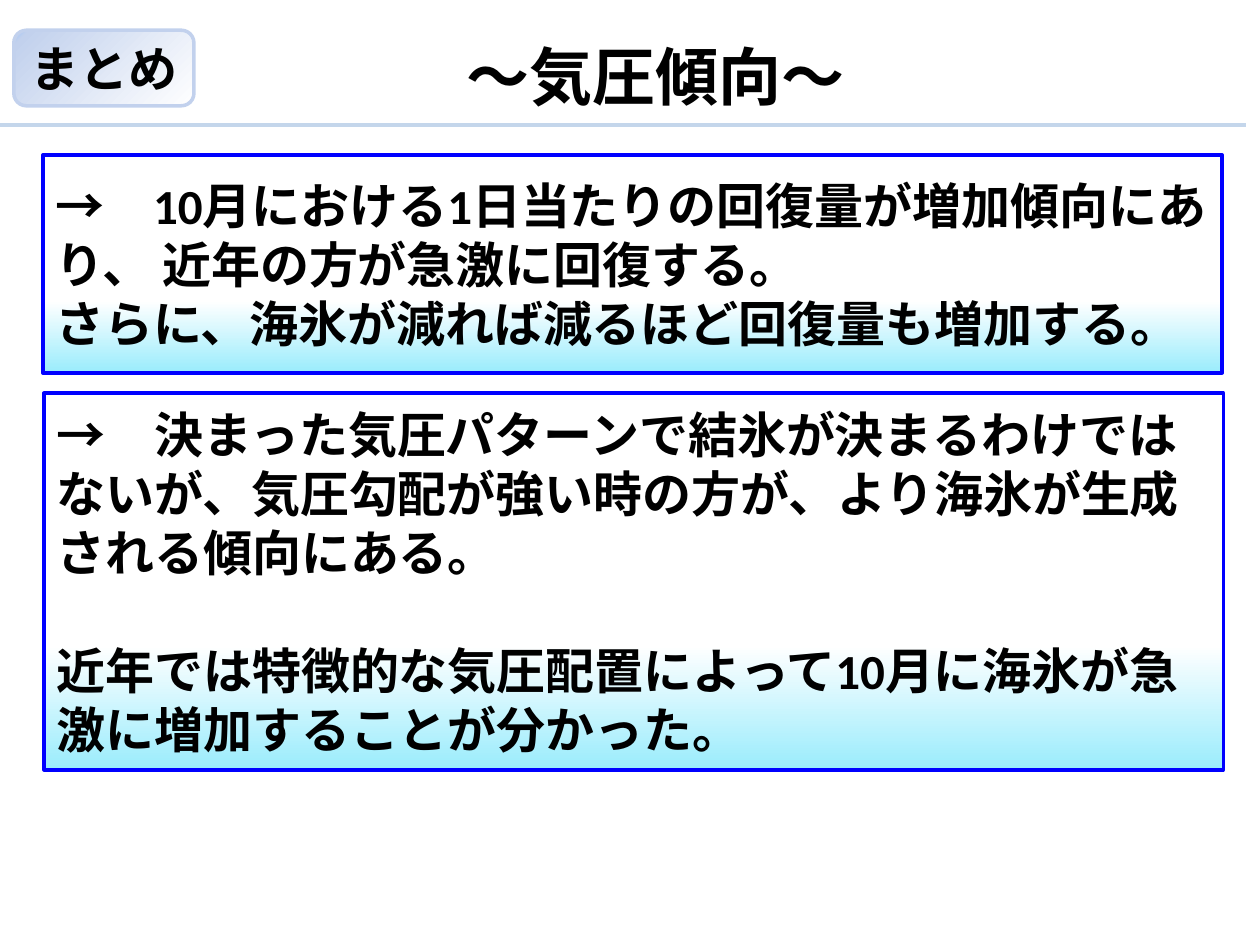
"""Build the summary slide on pressure trends and sea ice."""
from copy import deepcopy

from pptx import Presentation
from pptx.dml.color import RGBColor
from pptx.enum.lang import MSO_LANGUAGE_ID as LANG
from pptx.enum.shapes import MSO_CONNECTOR, MSO_SHAPE
from pptx.enum.text import MSO_ANCHOR, PP_ALIGN
from pptx.oxml.ns import qn
from pptx.util import Inches, Pt
from lxml.etree import SubElement

COLORS = {
    "text": "000000", "white": "FFFFFF", "border": "0000FF", "aqua": "9AECFC",
    "rule": "C4D6EB", "sky": "9BC3FF", "pale": "C2D1ED",
}
BOX_STOPS = [(0, "aqua"), (0.33, "white")]
BADGE_STOPS = [(0, "sky"), (0.06, "pale"), (1, "white")]


def write(s, paragraphs, size=28, align=PP_ALIGN.LEFT, gap=0):
    tf = s.text_frame
    tf.word_wrap = True
    tf.vertical_anchor = MSO_ANCHOR.MIDDLE
    for i, text in enumerate(paragraphs):
        p = tf.add_paragraph() if i else tf.paragraphs[0]
        p.alignment = align
        p.space_before = Pt(gap if i else 0)
        r = p.add_run()
        r.text = text
        r.font.name = "Calibri"
        r.font.size = Pt(size)
        r.font.bold = True
        r.font.language_id = LANG.JAPANESE
        r.font.color.rgb = RGBColor.from_string(COLORS["text"])


def add_panel(shapes, kind, box, stops, angle, line):
    s = shapes.add_shape(kind, *(Inches(v) for v in box))
    s.shadow.inherit = False
    s.fill.gradient()
    s.fill.gradient_angle = angle
    gs_list = next(s.element.spPr.iter(qn("a:gsLst")))
    while len(gs_list) < len(stops):
        gs_list.append(deepcopy(gs_list[-1]))
    for stop, (position, color) in zip(s.fill.gradient_stops, stops):
        stop.position = position
        stop.color.rgb = RGBColor.from_string(COLORS[color])
    s.line.color.rgb = RGBColor.from_string(COLORS[line])
    s.line.width = Pt(2)
    return s


prs = Presentation()
prs.slide_width, prs.slide_height = Inches(10), Inches(7.5)
slide = prs.slides.add_slide(prs.slide_layouts[5])
shapes = slide.shapes

title = shapes.title
title.left, title.top = Inches(1.54), Inches(0.36)
title.width, title.height = Inches(7.32), Inches(0.48)
title.fill.solid()
title.fill.fore_color.rgb = RGBColor.from_string(COLORS["white"])
write(title, ["～気圧傾向～"], 36, PP_ALIGN.CENTER)

rule = shapes.add_connector(
    MSO_CONNECTOR.STRAIGHT, Inches(-0.01), Inches(0.99), Inches(9.89), Inches(0.99))
rule.line.color.rgb = RGBColor.from_string(COLORS["rule"])
rule.line.width = Pt(2.5)
SubElement(rule.element.spPr, qn("a:effectLst"))

boxes = [
    ((0.34, 1.23, 9.36, 1.73), 0, [
        "→　10月における1日当たりの回復量が増加傾向にあり、 近年の方が急激に回復する。",
        "さらに、海氷が減れば減るほど回復量も増加する。",
    ]),
    ((0.35, 3.12, 9.36, 2.99), 34, [
        "→　決まった気圧パターンで結氷が決まるわけではないが、"
        "気圧勾配が強い時の方が、より海氷が生成される傾向にある。",
        "近年では特徴的な気圧配置によって10月に海氷が急激に増加することが分かった。",
    ]),
]
for box, gap, paragraphs in boxes:
    s = add_panel(shapes, MSO_SHAPE.RECTANGLE, box, BOX_STOPS, 90, "border")
    write(s, paragraphs, gap=gap)

badge = add_panel(shapes, MSO_SHAPE.ROUNDED_RECTANGLE, (0.11, 0.24, 1.43, 0.6),
                  BADGE_STOPS, 315, "pale")
write(badge, ["まとめ"], align=PP_ALIGN.CENTER)

prs.save("out.pptx")
